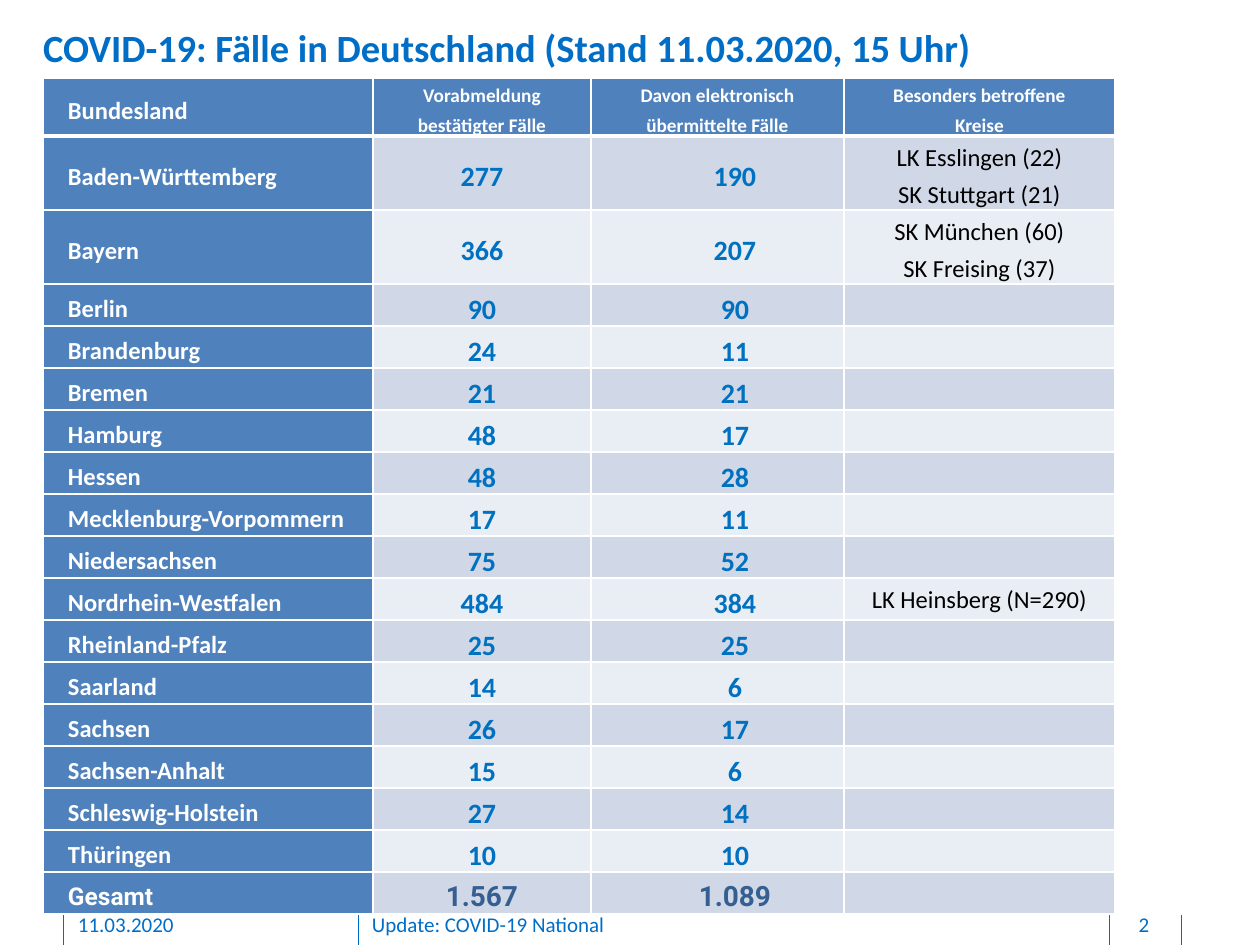
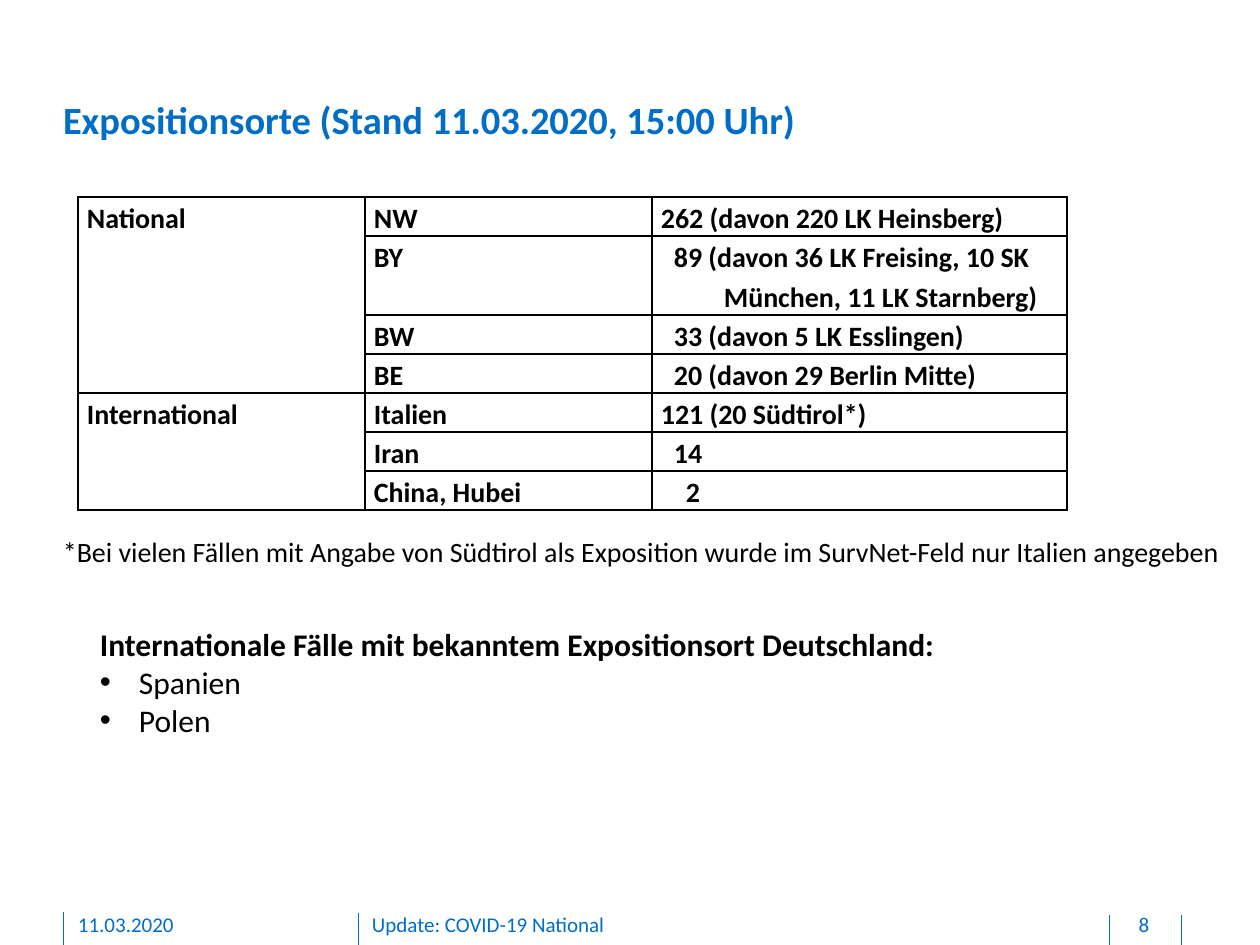
from lxml.etree import SubElement
from pptx import Presentation
from pptx.dml.color import RGBColor
from pptx.enum.shapes import MSO_CONNECTOR
from pptx.enum.text import MSO_ANCHOR, PP_ALIGN
from pptx.oxml.ns import qn
from pptx.util import Pt

EMU_PER_PX = 914400 / 126
SLIDE_W, SLIDE_H = 1260, 945

TITLE_BLUE = RGBColor(0x00, 0x6E, 0xC7)
COUNT_BLUE = RGBColor(0x00, 0x70, 0xC0)
TOTAL_BLUE = RGBColor(0x36, 0x5F, 0x91)
HEAD_FILL = RGBColor(0x4F, 0x81, 0xBD)
BAND_FILLS = (RGBColor(0xD0, 0xD8, 0xE8), RGBColor(0xE9, 0xED, 0xF4))
WHITE = RGBColor(0xFF, 0xFF, 0xFF)
BLACK = RGBColor(0x00, 0x00, 0x00)

TITLE = dict(size=Pt(22), color=TITLE_BLUE, bold=True)
FOOTER = dict(size=Pt(12), color=TITLE_BLUE)
STATE = dict(size=Pt(14), color=WHITE, bold=True)
COLUMN_HEAD = dict(size=Pt(11), color=WHITE, bold=True)
COUNT = dict(size=Pt(16), color=COUNT_BLUE, bold=True)
TOTAL_NAME = dict(STATE, name="Roboto")
TOTAL = dict(COUNT, color=TOTAL_BLUE, name="Roboto")
DISTRICT = dict(size=Pt(14), color=BLACK, bold=False)
EXPOSURE = dict(size=Pt(16), color=BLACK, bold=True)
NOTE = dict(size=Pt(16), color=BLACK)
LIST_HEAD = dict(size=Pt(18), color=BLACK, bold=True)
LIST_ITEM = dict(LIST_HEAD, bold=False)

CASES = [
    ("Baden-Württemberg", "277", "190", ["LK Esslingen (22)", "SK Stuttgart (21)"]),
    ("Bayern", "366", "207", ["SK München (60)", "SK Freising (37)"]),
    ("Berlin", "90", "90", []),
    ("Brandenburg", "24", "11", []),
    ("Bremen", "21", "21", []),
    ("Hamburg", "48", "17", []),
    ("Hessen", "48", "28", []),
    ("Mecklenburg-Vorpommern", "17", "11", []),
    ("Niedersachsen", "75", "52", []),
    ("Nordrhein-Westfalen", "484", "384", ["LK Heinsberg (N=290)"]),
    ("Rheinland-Pfalz", "25", "25", []),
    ("Saarland", "14", "6", []),
    ("Sachsen", "26", "17", []),
    ("Sachsen-Anhalt", "15", "6", []),
    ("Schleswig-Holstein", "27", "14", []),
    ("Thüringen", "10", "10", []),
    ("Gesamt", "1.567", "1.089", []),
]

# Region, place, cases, left margin and first-line indent of the cases
EXPOSURES = [
    ("National", "NW", "262 (davon 220 LK Heinsberg)", 0, 0),
    ("", "BY", "89 (davon 36 LK Freising, 10 SK München, 11 LK Starnberg)", 63, -50),
    ("", "BW", "33 (davon 5 LK Esslingen)", 13, 0),
    ("", "BE", "20 (davon 29 Berlin Mitte)", 13, 0),
    ("International", "Italien", "121 (20 Südtirol*)", 0, 0),
    ("", "Iran", "14", 13, 0),
    ("", "China, Hubei", "2", 25, 0),
]


def px(length):
    return round(length * EMU_PER_PX)


def write(paragraph, text, style, align=PP_ALIGN.LEFT, spacing=None,
          left=0, indent=0, bullet=None):
    """Fill one paragraph with a single formatted run."""
    props = paragraph._p.get_or_add_pPr()
    props.set("marL", str(px(left)))
    props.set("indent", str(px(indent)))
    if bullet:
        SubElement(props, qn("a:buFont"), typeface="Arial")
        SubElement(props, qn("a:buChar"), char=bullet)
    paragraph.alignment = align
    if spacing:
        paragraph.line_spacing = spacing
    run = paragraph.add_run()
    run.text = text
    for key, value in {"name": "Calibri", **style}.items():
        if key == "color":
            run.font.color.rgb = value
        else:
            setattr(run.font, key, value)


def write_lines(frame, lines, style, **layout):
    for i, line in enumerate(lines):
        paragraph = frame.add_paragraph() if i else frame.paragraphs[0]
        write(paragraph, line, style, **layout)


def add_text(slide, box, text, style, insets=(0, 0, 0, 0), wrap=True, **layout):
    frame = slide.shapes.add_textbox(*map(px, box)).text_frame
    frame.word_wrap = wrap
    for side, inset in zip(("left", "top", "right", "bottom"), insets):
        setattr(frame, f"margin_{side}", px(inset))
    write(frame.paragraphs[0], text, style, **layout)
    return frame


def add_grid(slide, left, top, widths, heights):
    """Plain table without the banded style."""
    grid = slide.shapes.add_table(
        len(heights), len(widths),
        *map(px, (left, top, sum(widths), sum(heights)))).table
    grid.first_row = grid.horz_banding = False
    for column, width in zip(grid.columns, widths):
        column.width = px(width)
    for row, height in zip(grid.rows, heights):
        row.height = px(height)
    return grid


def format_cell(cell, side_inset, border, fill=None, anchor=MSO_ANCHOR.TOP,
                top_width=1, bottom_width=1):
    cell.margin_left = cell.margin_right = px(side_inset)
    cell.margin_top = cell.margin_bottom = 0
    cell.vertical_anchor = anchor
    edges = {"a:lnL": 1, "a:lnR": 1, "a:lnT": top_width, "a:lnB": bottom_width}
    for tag, width in edges.items():
        edge = SubElement(cell._tc.get_or_add_tcPr(), qn(tag), w=str(Pt(width)))
        paint = SubElement(edge, qn("a:solidFill"))
        SubElement(paint, qn("a:srgbClr"), val=str(border))
    if fill is None:
        cell.fill.background()
    else:
        cell.fill.solid()
        cell.fill.fore_color.rgb = fill


def add_frame(slide, title, title_left, title_top, number):
    """Title and footer, shared by all slides."""
    add_text(slide, (title_left, title_top, 1115, 47), title, TITLE)

    # Footer separators
    for x, top in ((63, 912), (358, 913), (1109, 915), (1181, 915)):
        rule = slide.shapes.add_connector(
            MSO_CONNECTOR.STRAIGHT, *map(px, (x, top, x, SLIDE_H)))
        rule.line.color.rgb = TITLE_BLUE
        rule.line.width = Pt(0.5)
        SubElement(rule._element.spPr, qn("a:effectLst"))

    # Footer texts
    for left, width, text, align in (
            (78, 256, "11.03.2020", PP_ALIGN.LEFT),
            (372, 714, "Update: COVID-19 National", PP_ALIGN.LEFT),
            (1110, 68, number, PP_ALIGN.CENTER)):
        add_text(slide, (left, 912, width, 26), text, FOOTER,
                 insets=(0, 0, 0, 6), align=align)


def add_case_table(slide, left, top):
    heights = [58] + [74 if len(case[3]) > 1 else 42 for case in CASES]
    grid = add_grid(slide, left, top, (330, 218, 253, 271), heights)
    centred = dict(align=PP_ALIGN.CENTER, spacing=1.25)

    # Header row
    heads = ("Bundesland", "Vorabmeldung bestätigter Fälle",
             "Davon elektronisch übermittelte Fälle", "Besonders betroffene Kreise")
    for col, head in enumerate(heads):
        cell = grid.cell(0, col)
        format_cell(cell, 25, WHITE, HEAD_FILL, MSO_ANCHOR.MIDDLE, bottom_width=3)
        layout = centred if col else dict(spacing=1.25)
        write_lines(cell.text_frame, [head], COLUMN_HEAD if col else STATE, **layout)

    # One row per state, then the total
    for row, (state, reported, submitted, districts) in enumerate(CASES, 1):
        is_total = row == len(CASES)
        count_style = TOTAL if is_total else COUNT
        contents = (
            ([state], TOTAL_NAME if is_total else STATE, dict(spacing=1.25)),
            ([reported], count_style, centred),
            ([submitted], count_style, dict(centred, indent=35)),
            (districts, DISTRICT, centred),
        )
        for col, (lines, style, layout) in enumerate(contents):
            cell = grid.cell(row, col)
            format_cell(cell, 25, WHITE,
                        BAND_FILLS[(row - 1) % 2] if col else HEAD_FILL,
                        MSO_ANCHOR.TOP if col == 3 else MSO_ANCHOR.MIDDLE,
                        top_width=3 if row == 1 else 1)
            write_lines(cell.text_frame, lines, style, **layout)


def add_exposure_table(slide, left, top):
    heights = [79 if place == "BY" else 39 for _, place, *_ in EXPOSURES]
    grid = add_grid(slide, left, top, (287, 287, 415), heights)
    for row, (region, place, cases, margin, indent) in enumerate(EXPOSURES):
        for col, text in enumerate((region, place, cases)):
            cell = grid.cell(row, col)
            format_cell(cell, 9, BLACK)
            layout = dict(left=margin, indent=indent) if col == 2 else {}
            if text:
                write_lines(cell.text_frame, [text], EXPOSURE, spacing=1.15, **layout)

    # Each region spans its places
    starts = [row for row, entry in enumerate(EXPOSURES) if entry[0]]
    for first, after in zip(starts, starts[1:] + [len(EXPOSURES)]):
        grid.cell(first, 0).merge(grid.cell(after - 1, 0))


def add_abroad_list(slide, box):
    frame = add_text(slide, box,
                     "Internationale Fälle mit bekanntem Expositionsort Deutschland:",
                     LIST_HEAD, insets=(13, 6, 13, 6))
    for country in ("Spanien", "Polen"):
        write(frame.add_paragraph(), country, LIST_ITEM,
              left=39, indent=-39, bullet="•")


def build_cases_slide(slide):
    add_frame(slide, "COVID-19: Fälle in Deutschland (Stand 11.03.2020, 15 Uhr)",
              43, 24, "2")
    add_case_table(slide, 43, 78)


def build_exposure_slide(slide):
    add_frame(slide, "Expositionsorte (Stand 11.03.2020, 15:00 Uhr)", 63, 96, "8")
    add_exposure_table(slide, 78, 197)
    add_abroad_list(slide, (87, 619, 971, 127))
    add_text(slide, (50, 529, 1197, 47),
             "*Bei vielen Fällen mit Angabe von Südtirol als Exposition "
             "wurde im SurvNet-Feld nur Italien angegeben",
             NOTE, insets=(13, 6, 13, 6), wrap=False)


def main():
    deck = Presentation()
    deck.slide_width, deck.slide_height = px(SLIDE_W), px(SLIDE_H)
    for build in (build_cases_slide, build_exposure_slide):
        build(deck.slides.add_slide(deck.slide_layouts[6]))
    deck.save("out.pptx")


if __name__ == "__main__":
    main()
